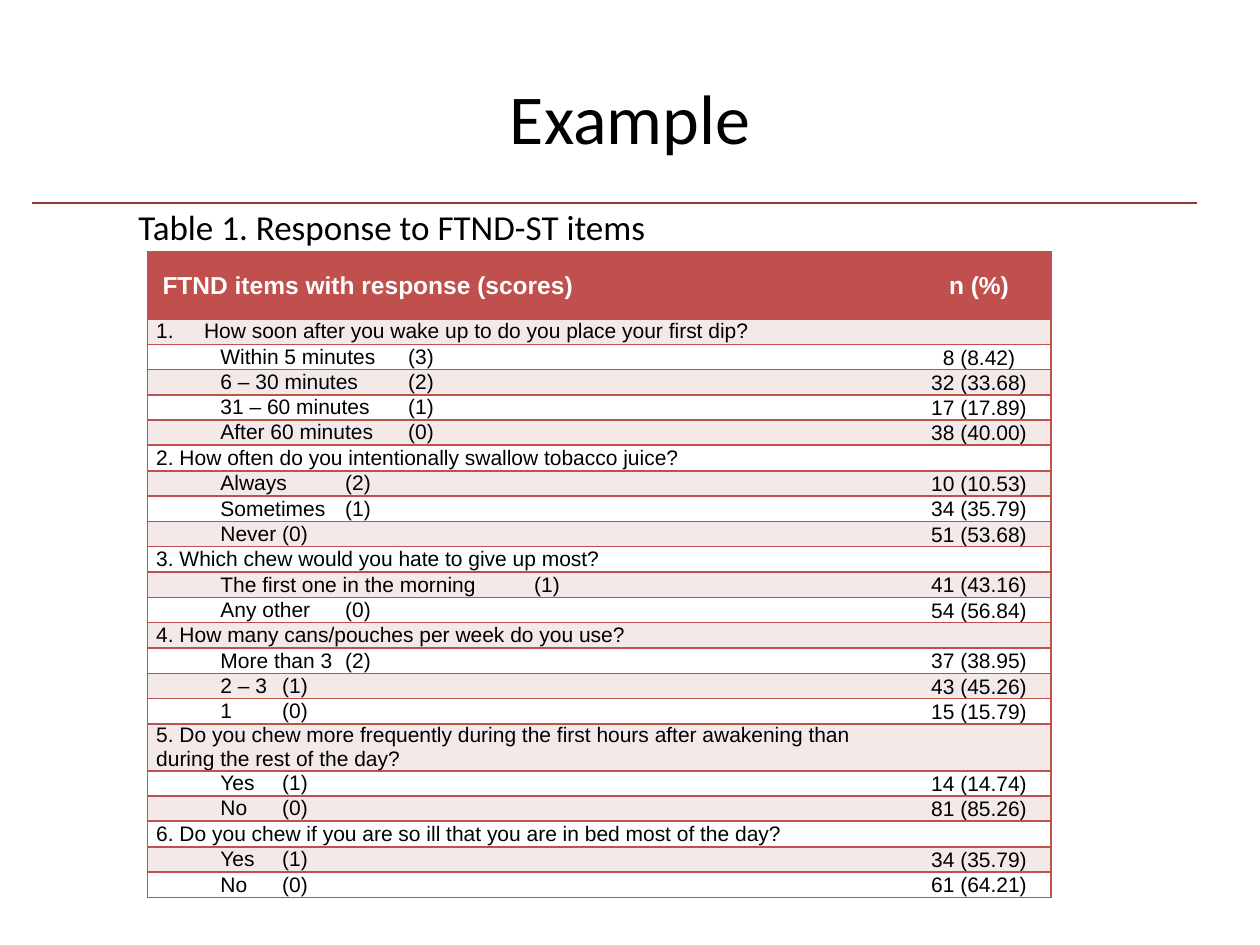
"""Build a slide with a table of responses to the FTND-ST items."""
import lxml.etree
import pptx
import pptx.dml.color
import pptx.enum.shapes
import pptx.enum.text
import pptx.oxml.ns
import pptx.util

Inches = pptx.util.Inches
Pt = pptx.util.Pt
CENTER = pptx.enum.text.PP_ALIGN.CENTER
MIDDLE = pptx.enum.text.MSO_ANCHOR.MIDDLE
RED = "C0504D"


def rgb(value):
    return pptx.dml.color.RGBColor.from_string(value)


def add_xml(parent, tag, **attributes):
    return lxml.etree.SubElement(parent, pptx.oxml.ns.qn(tag), attributes)


questions = [
    ("How soon after you wake up to do you place your first dip?", 1.88, [
        ("Within 5 minutes", 3, "8 (8.42)"),
        ("6 – 30 minutes", 2, "32 (33.68)"),
        ("31 – 60 minutes", 1, "17 (17.89)"),
        ("After 60 minutes", 0, "38 (40.00)")]),
    ("2. How often do you intentionally swallow tobacco juice?", 1.46, [
        ("Always", 2, "10 (10.53)"),
        ("Sometimes", 1, "34 (35.79)"),
        ("Never", 0, "51 (53.68)")]),
    ("3. Which chew would you hate to give up most?", 2.66, [
        ("The first one in the morning", 1, "41 (43.16)"),
        ("Any other", 0, "54 (56.84)")]),
    ("4. How many cans/pouches per week do you use?", 1.48, [
        ("More than 3", 2, "37 (38.95)"),
        ("2 – 3", 1, "43 (45.26)"),
        ("1", 0, "15 (15.79)")]),
    ("5. Do you chew more frequently during the first hours after awakening "
     "than during the rest of the day?", 0.91, [
         ("Yes", 1, "14 (14.74)"),
         ("No", 0, "81 (85.26)")]),
    ("6. Do you chew if you are so ill that you are in bed most of the day?", 0.91, [
        ("Yes", 1, "34 (35.79)"),
        ("No", 0, "61 (64.21)")]),
]
rows = [("FTND items with response (scores)", "n (%)", None)]
for question, score_tab, answers in questions:
    rows.append((question, "", None))
    for answer, score, count in answers:
        rows.append((f"{answer}\t({score})", count, score_tab))

presentation = pptx.Presentation()
presentation.slide_width = Inches(10)
presentation.slide_height = Inches(7.5)
slide = presentation.slides.add_slide(presentation.slide_layouts[5])

rule = slide.shapes.add_connector(
    pptx.enum.shapes.MSO_CONNECTOR.STRAIGHT,
    Inches(0.25), Inches(1.61), Inches(9.5), Inches(1.61))
rule.line.color.rgb = rgb("953735")
rule.line.width = Pt(1.5)
add_xml(rule._element.spPr, "a:effectLst")

title = slide.shapes.title
title.left, title.top = Inches(0.5), Inches(0.3)
title.width, title.height = Inches(9), Inches(1.25)
title.text_frame.text = "Example"
title.text_frame.vertical_anchor = MIDDLE
title.text_frame.paragraphs[0].alignment = CENTER
title_font = title.text_frame.paragraphs[0].runs[0].font
title_font.name, title_font.size = "Calibri", Pt(40)
title_font.color.rgb = rgb("000000")

responses = slide.shapes.add_table(
    len(rows), 2, Inches(1.17), Inches(2), Inches(7.17), Inches(5.17)).table
responses.horz_banding = False
responses.columns[0].width = Inches(6.03)
responses.columns[1].width = Inches(1.14)

for row_index, (item, count, score_tab) in enumerate(rows):
    header = row_index == 0
    responses.rows[row_index].height = Inches(0.53 if header else 0.2)
    for column, text in enumerate((item, count)):
        cell = responses.cell(row_index, column)
        cell.text = text
        cell.vertical_anchor = MIDDLE
        cell.margin_left = cell.margin_right = Inches(0.07)
        cell.margin_top = cell.margin_bottom = 0

        inner_side = "a:lnL" if column else "a:lnR"
        properties = cell._tc.get_or_add_tcPr()
        for side in ("a:lnL", "a:lnR", "a:lnT", "a:lnB"):
            border = add_xml(properties, side, w=str(Pt(1)))
            if side == inner_side:
                add_xml(border, "a:noFill")
            else:
                add_xml(add_xml(border, "a:solidFill"), "a:srgbClr", val=RED)
        cell.fill.solid()
        cell.fill.fore_color.rgb = rgb(
            RED if header else "F4E9E9" if row_index % 2 else "FFFFFF")

        paragraph = cell.text_frame.paragraphs[0]
        layout = paragraph._p.get_or_add_pPr()
        if column:
            paragraph.alignment = CENTER
        if header or (column and text):
            paragraph.line_spacing = 1.07
        if header and column == 0:
            layout.set("indent", str(Inches(0.05)))
        if row_index == 1 and column == 0:
            layout.set("marL", str(Inches(0.38)))
            layout.set("indent", str(-Inches(0.38)))
            add_xml(layout, "a:buFont", typeface="+mj-lt")
            add_xml(layout, "a:buAutoNum", type="arabicPeriod")
        if score_tab and column == 0:
            layout.set("marL", "0")
            layout.set("indent", str(Inches(0.51)))
            add_xml(add_xml(layout, "a:tabLst"), "a:tab",
                    pos=str(Inches(score_tab)), algn="l")
        if not text:
            add_xml(paragraph._p, "a:endParaRPr", sz="1200")
        for run in paragraph.runs:
            run.font.name = "Arial"
            run.font.size = Pt(14 if header else 12)
            run.font.bold = header
            run.font.color.rgb = rgb("FFFFFF" if header else "000000")

caption = slide.shapes.add_textbox(Inches(1), Inches(1.58), Inches(7.25), Inches(0.44))
caption.text_frame.word_wrap = True
caption.text_frame.text = "Table 1. Response to FTND-ST items"
caption_font = caption.text_frame.paragraphs[0].runs[0].font
caption_font.name, caption_font.size = "Calibri", Pt(20)
caption_font.color.rgb = rgb("000000")

presentation.save("out.pptx")
